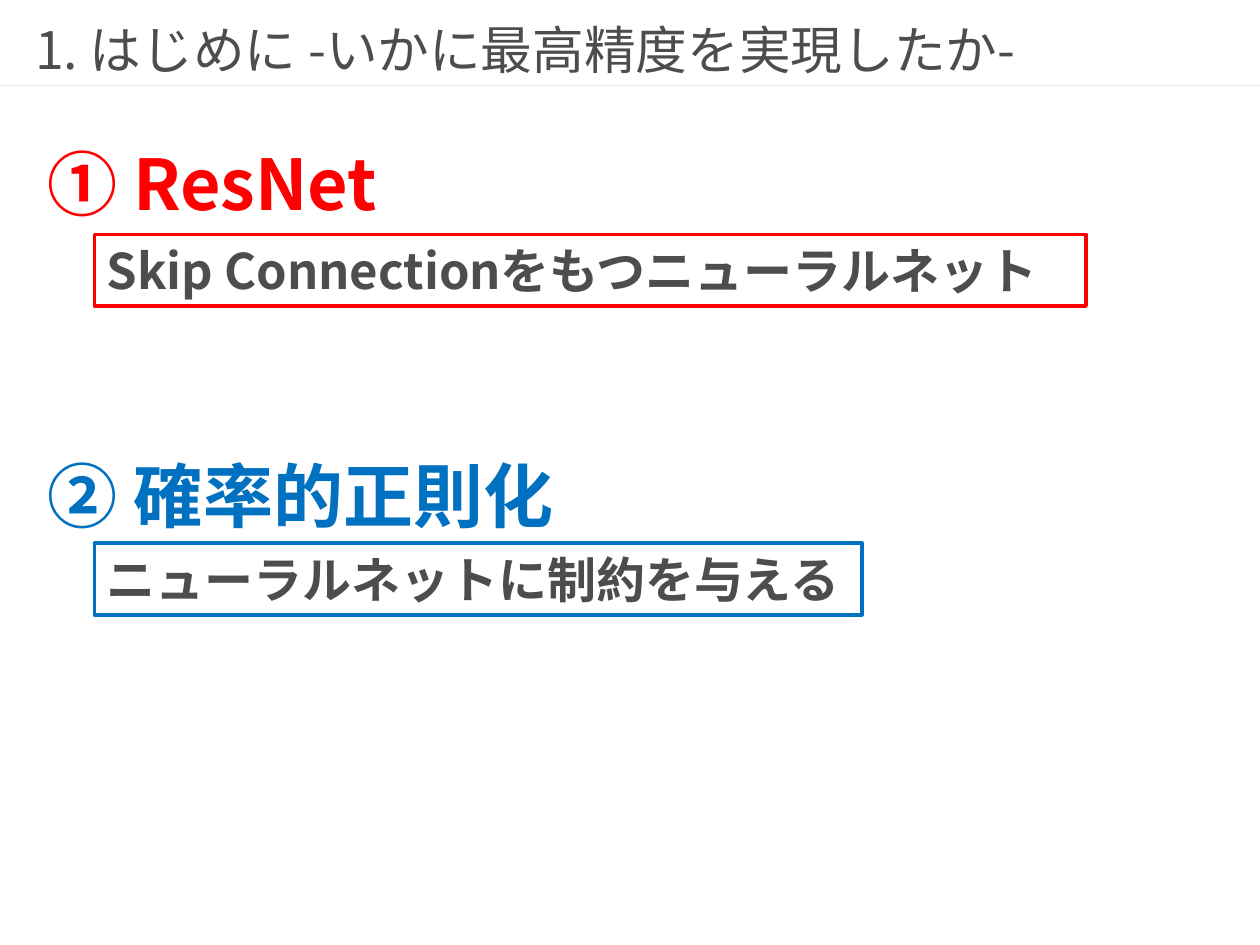
from lxml.etree import SubElement as Sub
from pptx import Presentation
from pptx.dml.color import RGBColor as Rgb
from pptx.enum.shapes import MSO_CONNECTOR as Conn, MSO_SHAPE as Kind
from pptx.enum.text import MSO_ANCHOR as Anchor, PP_ALIGN as Align
from pptx.oxml.ns import qn
from pptx.util import Inches, Pt

FONT = "Noto Sans CJK JP"
GREY = "4D4D4D"
INSET = {"margin_left": 0.1, "margin_right": 0.1, "margin_top": 0.05, "margin_bottom": 0.05}
TOPICS = [
    (1.06, "① ResNet", "Skip Connectionをもつニューラルネット", "FF0000", 3.05, 7.87, 0.8),
    (3.54, "② 確率的正則化", "ニューラルネットに制約を与える", "0070C0", 4.31, 6.09, 0.77),
]


def paint(code):
    """Turn a hex string into a colour."""
    return Rgb.from_string(code)


def write(shape, text, size, color, bold=False, inset=INSET):
    """Set one line of formatted text in a shape."""
    frame = shape.text_frame
    form = {"word_wrap": True, "vertical_anchor": Anchor.MIDDLE}
    form.update({side: Inches(gap) for side, gap in inset.items()})
    for key, value in form.items():
        setattr(frame, key, value)
    para = frame.paragraphs[0]
    para.alignment = Align.LEFT
    run = para.add_run()
    run.text = text
    for key, value in {"name": FONT, "size": Pt(size), "bold": bold}.items():
        setattr(run.font, key, value)
    run.font.color.rgb = paint(color)
    Sub(run.font._element, qn("a:ea"), typeface=FONT)


def header(slide, left, top, width, height):
    """Draw the title and the rule below it."""
    rule = slide.shapes.add_connector(
        Conn.STRAIGHT, 0, Inches(top + 0.51), Inches(10), Inches(top + 0.51))
    rule.line.color.rgb = paint("EAEAEA")
    rule.line.width = Pt(0.75)
    Sub(rule._element.spPr, qn("a:effectLst"))
    title = slide.shapes.add_textbox(*map(Inches, (left, top, width, height)))
    write(title, "1. はじめに -いかに最高精度を実現したか-", 29.5, GREY,
          inset=dict.fromkeys(INSET, 0))


def topic(slide, left, top, head, note, color, wide, span, drop):
    """Draw a numbered heading with a framed note below it."""
    frame = slide.shapes.add_shape(
        Kind.RECTANGLE, *map(Inches, (left + 0.47, top + drop, span, 0.57)))
    frame.shadow.inherit = False
    frame.fill.solid()
    frame.fill.fore_color.rgb = paint("FFFFFF")
    frame.line.color.rgb = paint(color)
    frame.line.width = Pt(2)
    write(frame, note, 28, GREY, True)
    label = slide.shapes.add_textbox(*map(Inches, (left, top, wide, 0.77)))
    write(label, head, 40, color, True)


def main():
    """Build and save the slide."""
    deck = Presentation()
    deck.slide_width, deck.slide_height = Inches(10), Inches(7.5)
    slide = deck.slides.add_slide(deck.slide_layouts[6])
    header(slide, 0.28, 0.17, 9.45, 0.43)
    for top, *rest in TOPICS:
        topic(slide, 0.28, top, *rest)
    deck.save("out.pptx")


if __name__ == "__main__":
    main()
